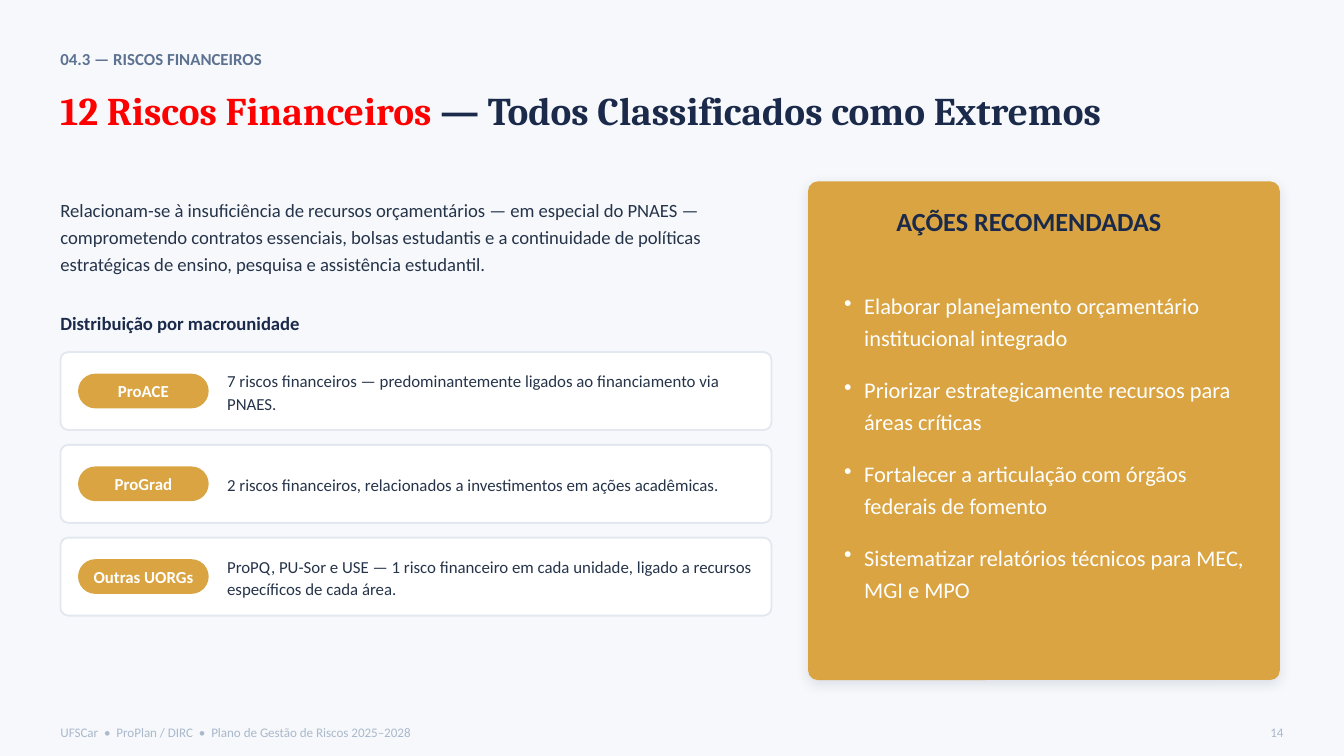
from lxml import etree
from pptx import Presentation
from pptx.dml.color import RGBColor
from pptx.enum.shapes import MSO_SHAPE
from pptx.enum.text import MSO_ANCHOR, PP_ALIGN
from pptx.oxml.ns import qn
from pptx.util import Pt

ROUNDED = MSO_SHAPE.ROUNDED_RECTANGLE
TOP, MIDDLE = MSO_ANCHOR.TOP, MSO_ANCHOR.MIDDLE
LEFT, CENTER, RIGHT = PP_ALIGN.LEFT, PP_ALIGN.CENTER, PP_ALIGN.RIGHT

NAVY, INK, GOLD, WHITE = "1B2A4A", "26344A", "D9A441", "FFFFFF"
SLATE, MUTED, RED, BORDER, PAPER = "5D7290", "AAB9CC", "FF0000", "E3E8F0", "F6F8FB"
color = RGBColor.from_string

MARGIN = 32.4
COLUMN_WIDTH = 380.9

deck = Presentation()
deck.slide_width, deck.slide_height = Pt(720), Pt(405)
slide = deck.slides.add_slide(deck.slide_layouts[6])
slide.background.fill.solid()
slide.background.fill.fore_color.rgb = color(PAPER)


def add_text(box, paragraphs, size, bold=False, font="Calibri", anchor=MIDDLE, **layout):
    """Add a text box; each paragraph is a list of (text, colour) runs."""
    frame = slide.shapes.add_textbox(*map(Pt, box)).text_frame
    frame_format = {"word_wrap": True, "vertical_anchor": anchor, "margin_left": 0,
                    "margin_right": 0, "margin_top": 0, "margin_bottom": 0}
    for key, value in frame_format.items():
        setattr(frame, key, value)
    for index, runs in enumerate(paragraphs):
        paragraph = frame.add_paragraph() if index else frame.paragraphs[0]
        for key, value in layout.items():
            setattr(paragraph, key, value)
        for text, hex_color in runs:
            run = paragraph.add_run()
            run.text = text
            for key, value in {"name": font, "size": Pt(size), "bold": bold}.items():
                setattr(run.font, key, value)
            run.font.color.rgb = color(hex_color)
    return frame


def add_panel(box, fill, corner, border=None):
    panel = slide.shapes.add_shape(ROUNDED, *map(Pt, box))
    panel.adjustments[0] = corner
    panel.shadow.inherit = False
    panel.fill.solid()
    panel.fill.fore_color.rgb = color(fill)
    if border:
        panel.line.color.rgb = color(border)
        panel.line.width = Pt(1)
    else:
        panel.line.fill.background()
    return panel


# Heading
add_text((MARGIN, 23, 432, 17.3), [[("04.3 — RISCOS FINANCEIROS", SLATE)]], 9, bold=True)
add_text((MARGIN, 38.9, 653, 40.3),
         [[("12 Riscos Financeiros ", RED), ("— Todos Classificados como Extremos", NAVY)]],
         21, bold=True, font="Cambria")

# Introduction
introduction = (
    "Relacionam-se à insuficiência de recursos orçamentários — em especial do PNAES — "
    "comprometendo contratos essenciais, bolsas estudantis e a continuidade de políticas "
    "estratégicas de ensino, pesquisa e assistência estudantil."
)
add_text((MARGIN, 97.2, COLUMN_WIDTH, 56.9), [[(introduction, INK)]], 10, line_spacing=1.22)
add_text((MARGIN, 163.4, COLUMN_WIDTH, 19.4),
         [[("Distribuição por macrounidade", NAVY)]], 10, bold=True)

# Unit cards
units = [
    ("ProACE", "7 riscos financeiros — predominantemente ligados ao financiamento via PNAES."),
    ("ProGrad", "2 riscos financeiros, relacionados a investimentos em ações acadêmicas."),
    ("Outras UORGs", "ProPQ, PU-Sor e USE — 1 risco financeiro em cada unidade, "
                     "ligado a recursos específicos de cada área."),
]
CARD_TOP, CARD_HEIGHT, CARD_STEP = 188.6, 41.8, 49.7
for index, (unit, description) in enumerate(units):
    top = CARD_TOP + index * CARD_STEP
    badge = (41.8, top + 11.6, 70, 18.6)
    add_panel((MARGIN, top, COLUMN_WIDTH, CARD_HEIGHT), WHITE, 0.1, border=BORDER)
    add_panel(badge, GOLD, 0.5)
    add_text(badge, [[(unit, WHITE)]], 9, bold=True, alignment=CENTER)
    add_text((121.7, top, 280.8, CARD_HEIGHT), [[(description, INK)]], 9, line_spacing=1.12)

# Recommended actions panel with its soft shadow
actions_panel = add_panel((432.9, 97.2, 252.7, 267.1), GOLD, 0.02)
effects = actions_panel.element.spPr.find(qn("a:effectLst"))
shadow = etree.SubElement(effects, qn("a:outerShdw"), blurRad=str(Pt(7)), dist=str(Pt(2)),
                          dir="5400000", algn="ctr", rotWithShape="0")
shadow_color = etree.SubElement(shadow, qn("a:srgbClr"), val=NAVY)
etree.SubElement(shadow_color, qn("a:alpha"), val="12000")

add_text((480.2, 108.7, 157.7, 19.4), [[("AÇÕES RECOMENDADAS", NAVY)]], 14, bold=True)

# Bulleted actions
actions = [
    "Elaborar planejamento orçamentário institucional integrado",
    "Priorizar estrategicamente recursos para áreas críticas",
    "Fortalecer a articulação com órgãos federais de fomento",
    "Sistematizar relatórios técnicos para MEC, MGI e MPO",
]
action_list = add_text((452.2, 154.1, 218.2, 175.7), [[(action, WHITE)] for action in actions],
                       12, anchor=TOP, line_spacing=1.18)
for index, paragraph in enumerate(action_list.paragraphs):
    paragraph.space_before = Pt(11 if index else 0)
    properties = paragraph._p.get_or_add_pPr()
    properties.set("marL", str(Pt(10.8)))
    properties.set("indent", str(Pt(-10.8)))
    bullet_color = etree.SubElement(properties, qn("a:buClr"))
    etree.SubElement(bullet_color, qn("a:srgbClr"), val=WHITE)
    etree.SubElement(properties, qn("a:buChar"), char="•")

# Footer
footer = "UFSCar  •  ProPlan / DIRC  •  Plano de Gestão de Riscos 2025–2028"
for box, text, alignment in [((MARGIN, 384.5, 486, 15.1), footer, LEFT),
                             ((660.2, 384.5, 27.4, 15.1), "14", RIGHT)]:
    add_text(box, [[(text, MUTED)]], 7, alignment=alignment)

deck.save("out.pptx")
